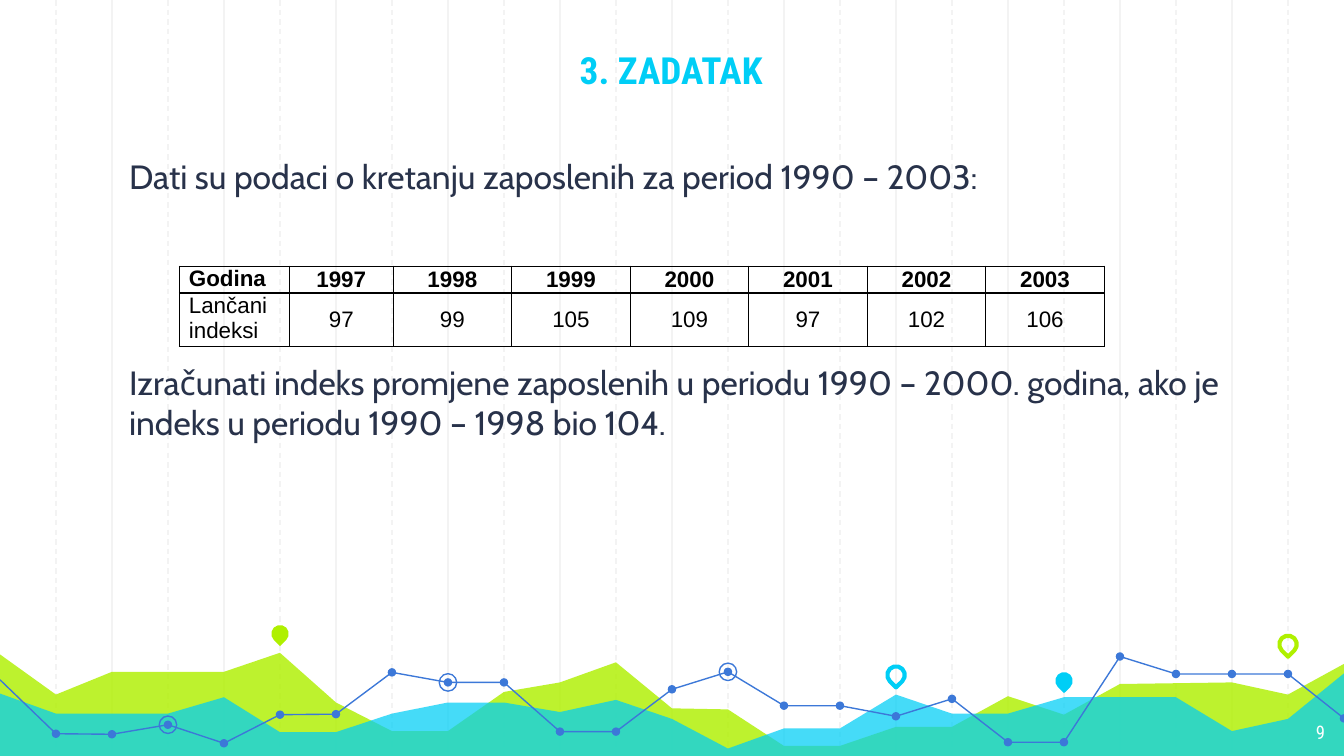
from lxml.etree import SubElement
from pptx import Presentation
from pptx.dml.color import RGBColor
from pptx.enum.dml import MSO_LINE
from pptx.enum.shapes import MSO_CONNECTOR, MSO_SHAPE
from pptx.enum.text import MSO_ANCHOR, PP_ALIGN
from pptx.oxml.ns import qn
from pptx.util import Cm, Pt

CYAN = RGBColor(0x00, 0xCE, 0xF6)
LIME = RGBColor(0xAF, 0xF0, 0x00)
BLUE = RGBColor(0x3C, 0x78, 0xD8)
PALE = RGBColor(0xF3, 0xF3, 0xF3)
NAVY = RGBColor(0x28, 0x32, 0x4A)
BLACK = RGBColor(0, 0, 0)
WHITE = RGBColor(255, 255, 255)

TITLE = "3. ZADATAK"
TASK = [
    "Dati su podaci o kretanju zaposlenih za period 1990 – 2003:",
    "Izračunati indeks promjene zaposlenih u periodu 1990 – 2000. godina, "
    "ako je indeks u periodu 1990 – 1998 bio 104.",
]
PAGE = "9"
INDEX_ROWS = [
    ("Godina", "1997", "1998", "1999", "2000", "2001", "2002", "2003"),
    ("Lančani indeksi", "97", "99", "105", "109", "97", "102", "106"),
]
COLUMN_WIDTHS = [2.08, 1.96] + [2.24] * 6
ROW_HEIGHTS = [0.47, 0.95]

WIDTH, HEIGHT = 25.4, 14.29
STEP = WIDTH / 24
BASE = 14.34

LIME_HILLS = [
    (0, 12.37), (1, 13.13), (2, 12.7), (4, 12.7), (5, 12.34), (6, 13.28),
    (7, 13.82), (8, 13.82), (9, 13.08), (10, 12.9), (11, 12.52), (12, 13.39),
    (13, 13.41), (14, 14.1), (15, 14.1), (16, 13.74), (17, 13.74), (18, 13.16),
    (19, 13.51), (20, 12.93), (22, 12.9), (23, 13.13), (24, 12.55),
]
CYAN_HILLS = [
    (0, 13.11), (1, 13.49), (3, 13.49), (4, 13.18), (5, 13.84), (6, 13.84),
    (7, 13.49), (8, 13.28), (9, 13.28), (10, 13.46), (11, 13.23), (12, 13.59),
    (13, 14.15), (14, 13.77), (15, 13.77), (16, 13.13), (17, 13.49), (18, 13.49),
    (19, 13.18), (21, 13.18), (22, 13.82), (23, 13.59), (24, 12.73),
]
TREND = list(enumerate([
    12.85, 13.87, 13.88, 13.7, 14.05, 13.51, 13.5, 12.71, 12.9, 12.9, 13.83, 13.83,
    13.03, 12.7, 13.34, 13.34, 13.54, 13.21, 14.03, 14.03, 12.41, 12.74, 12.74,
    12.74, 13.58,
]))
TREND_PARTS = [(0, 11), (11, 20), (20, 24)]
RINGED = [8, 3, 13]
PINS = [(5, 11.98, LIME, True), (16, 12.76, CYAN, False),
        (19, 12.87, CYAN, True), (23, 12.18, LIME, False)]

TITLE_FONT = {"name": "Roboto Condensed", "size": Pt(20), "bold": True}
TASK_FONT = {"name": "Cabin", "size": Pt(18)}
PAGE_FONT = {"name": "Roboto Condensed", "size": Pt(10)}
HEAD_FONT = {"name": "Arial", "size": Pt(12), "bold": True}
INDEX_FONT = {**HEAD_FONT, "bold": False}
FRAME = {"word_wrap": True, "margin_left": Cm(0.25), "margin_right": Cm(0.25),
         "margin_top": Cm(0.25), "margin_bottom": Cm(0.25)}
CELL = {"margin_left": Cm(0.18), "margin_right": Cm(0.18),
        "margin_top": 0, "margin_bottom": 0}


def apply(target, formats):
    for name, value in formats.items():
        setattr(target, name, value)


def paint(shape, fill=None, line=None, width=0.75):
    shape.shadow.inherit = False
    for part, color in ((shape.fill, fill), (shape.line.fill, line)):
        if color is None:
            part.background()
        else:
            part.solid()
            part.fore_color.rgb = color
    if line is not None:
        shape.line.width = Pt(width)


def write(paragraph, words, font, color, align=PP_ALIGN.LEFT):
    paragraph.alignment = align
    run = paragraph.add_run()
    run.text = words
    apply(run.font, font)
    run.font.color.rgb = color


def add_frame(slide, left, top, width, height, **formats):
    frame = slide.shapes.add_textbox(Cm(left), Cm(top), Cm(width), Cm(height)).text_frame
    apply(frame, {**FRAME, **formats})
    return frame


def add_path(slide, points, closed):
    corners = [(Cm(x), Cm(y)) for x, y in points]
    builder = slide.shapes.build_freeform(*corners[0])
    builder.add_line_segments(corners[1:], close=closed)
    return builder.convert_to_shape()


def add_mark(slide, kind, column, y, size):
    return slide.shapes.add_shape(kind, Cm(column * STEP - size / 2), Cm(y - size / 2),
                                  Cm(size), Cm(size))


def add_grid(slide):
    for first, dash in ((2, MSO_LINE.SOLID), (1, MSO_LINE.DASH)):
        for column in range(first, 24, 2):
            x = Cm(column * STEP)
            rule = slide.shapes.add_connector(MSO_CONNECTOR.STRAIGHT, x, 0, x, Cm(14.35))
            rule.line.color.rgb = PALE
            apply(rule.line, {"width": Pt(0.75), "dash_style": dash})
            SubElement(rule._element.spPr, qn("a:effectLst"))


def add_hills(slide, ridge, color, opacity):
    points = [(column * STEP, y) for column, y in ridge]
    hills = add_path(slide, points + [(WIDTH, BASE), (0, BASE)], True)
    paint(hills, fill=color)
    tint = hills._element.spPr.find(qn("a:solidFill")).find(qn("a:srgbClr"))
    SubElement(tint, qn("a:alpha"), val=str(opacity * 1000))


def add_pin(slide, column, y, color, filled):
    pin = add_mark(slide, MSO_SHAPE.TEAR, column, y, 0.33)
    pin.rotation = 135
    if filled:
        paint(pin, fill=color)
    else:
        paint(pin, line=color, width=2.25)


def add_trend(slide):
    for first, last in TREND_PARTS:
        points = [(column * STEP, y) for column, y in TREND[first:last + 1]]
        paint(add_path(slide, points, False), line=BLUE)
    for column, y in TREND[1:]:
        paint(add_mark(slide, MSO_SHAPE.OVAL, column, y, 0.16), fill=BLUE)
    for column in RINGED:
        paint(add_mark(slide, MSO_SHAPE.OVAL, *TREND[column], 0.33), line=BLUE)


def add_borders(cell):
    properties = cell._tc.get_or_add_tcPr()
    for side in ("lnL", "lnR", "lnT", "lnB"):
        border = SubElement(properties, qn(f"a:{side}"), w=str(Pt(0.75)))
        solid = SubElement(border, qn("a:solidFill"))
        SubElement(solid, qn("a:srgbClr"), val=str(BLACK))


def add_index_table(slide):
    table = slide.shapes.add_table(
        len(INDEX_ROWS), len(COLUMN_WIDTHS), Cm(3.39), Cm(5.03),
        Cm(sum(COLUMN_WIDTHS)), Cm(sum(ROW_HEIGHTS))).table
    apply(table, {"first_row": False, "horz_banding": False})
    for column, width in zip(table.columns, COLUMN_WIDTHS):
        column.width = Cm(width)
    for row, height, entries, font in zip(table.rows, ROW_HEIGHTS, INDEX_ROWS,
                                          (HEAD_FONT, INDEX_FONT)):
        row.height = Cm(height)
        for position, (cell, entry) in enumerate(zip(row.cells, entries)):
            anchor = MSO_ANCHOR.MIDDLE if position else MSO_ANCHOR.TOP
            apply(cell, {**CELL, "vertical_anchor": anchor})
            add_borders(cell)
            cell.fill.background()
            write(cell.text_frame.paragraphs[0], entry, font, BLACK,
                  PP_ALIGN.CENTER if position else PP_ALIGN.LEFT)


def main():
    deck = Presentation()
    apply(deck, {"slide_width": Cm(WIDTH), "slide_height": Cm(HEIGHT)})
    slide = deck.slides.add_slide(deck.slide_layouts[6])
    add_grid(slide)
    add_hills(slide, LIME_HILLS, LIME, 82)
    add_hills(slide, CYAN_HILLS, CYAN, 73)
    for pin in PINS[:3]:
        add_pin(slide, *pin)
    add_trend(slide)
    add_pin(slide, *PINS[3])
    page = add_frame(slide, 23.77, 13.41, 1.52, 0.89)
    write(page.paragraphs[0], PAGE, PAGE_FONT, WHITE, PP_ALIGN.RIGHT)
    task = add_frame(slide, 1.88, 2.69, 21.59, 9.53, margin_left=Cm(0.56))
    write(task.paragraphs[0], TASK[0], TASK_FONT, NAVY)
    question = task.add_paragraph()
    question.space_before = Pt(89)
    write(question, TASK[1], TASK_FONT, NAVY)
    title = add_frame(slide, 2.97, 0, 19.43, 1.98, vertical_anchor=MSO_ANCHOR.BOTTOM)
    write(title.paragraphs[0], TITLE, TITLE_FONT, CYAN, PP_ALIGN.CENTER)
    add_index_table(slide)
    deck.save("out.pptx")


if __name__ == "__main__":
    main()
